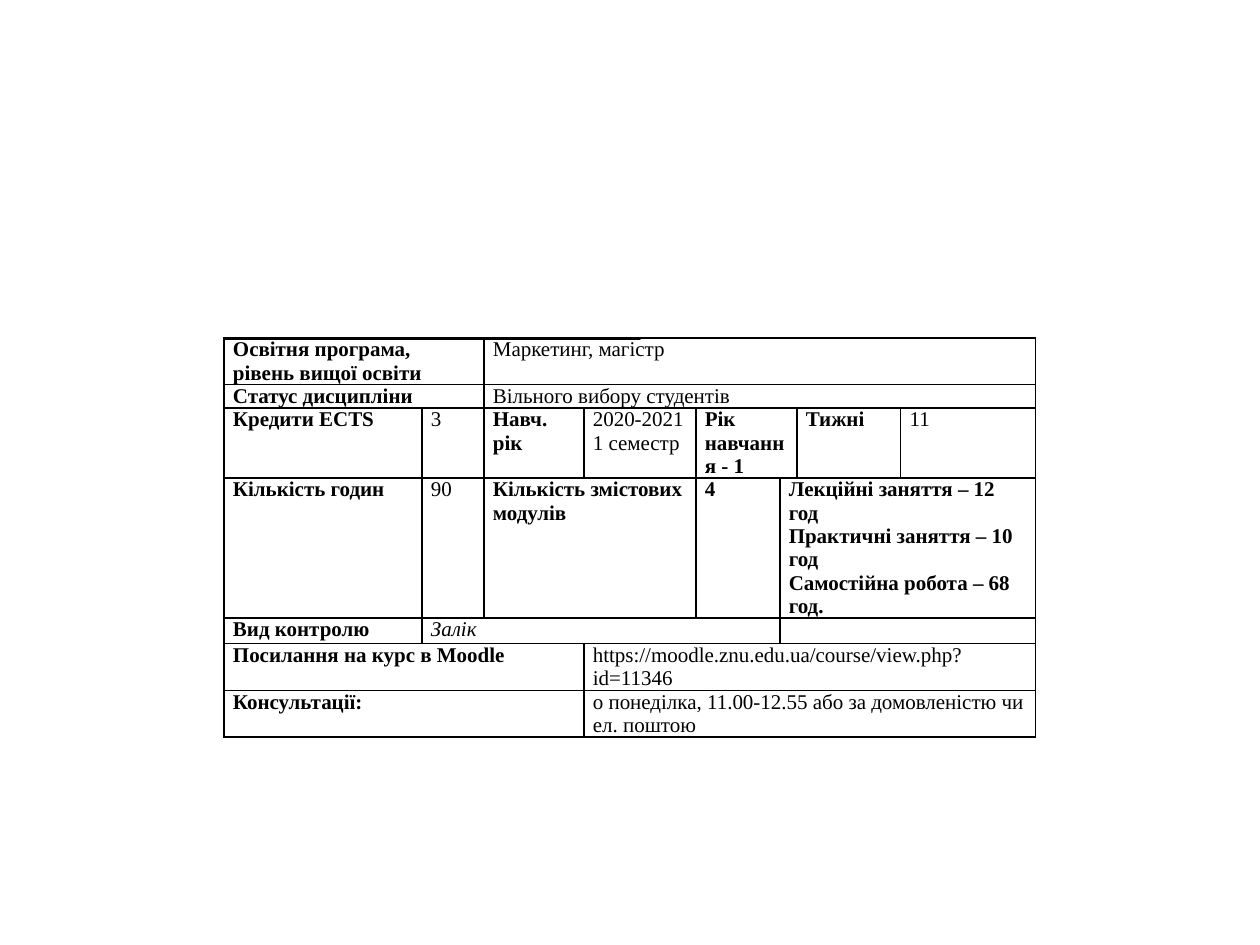
from pptx import Presentation
from pptx.dml.color import RGBColor
from pptx.enum.shapes import MSO_SHAPE
from pptx.oxml.xmlchemy import OxmlElement
from pptx.util import Emu, Pt

PX = 914400 // 126
BLACK = RGBColor(0x00, 0x00, 0x00)
FONT = "Times New Roman"
LEFT, TOP = 224, 338
COLUMN_WIDTHS = [198, 62, 100, 112, 84, 17, 104, 135]
ROW_HEIGHT = 21

# Each row lists its cells as (columns covered, text, style)
ROWS = [
    [(2, "Освітня програма, рівень вищої освіти", "bold"),
     (6, "Маркетинг, магістр", "")],
    [(2, "Статус дисципліни", "bold"),
     (6, "Вільного вибору студентів", "")],
    [(1, "Кредити ECTS", "bold"), (1, "3", ""), (1, "Навч. рік", "bold"),
     (1, "2020-2021 1 семестр", ""), (2, "Рік навчання - 1", "bold"),
     (1, "Тижні", "bold"), (1, "11", "")],
    [(1, "Кількість годин", "bold"), (1, "90", ""),
     (2, "Кількість змістових модулів", "bold"), (1, "4", "bold"),
     (3, "Лекційні заняття – 12 год\nПрактичні заняття – 10 год\n"
         "Самостійна робота – 68 год.", "bold")],
    [(1, "Вид контролю", "bold"), (4, "Залік", "italic"), (3, "", "")],
    [(3, "Посилання на курс в Moodle", "bold"),
     (5, "https://moodle.znu.edu.ua/course/view.php?id=11346", "")],
    [(3, "Консультації:", "bold"),
     (5, "о понеділка, 11.00-12.55 або за домовленістю чи ел. поштою", "")],
]


def add_borders(cell):
    properties = cell._tc.get_or_add_tcPr()
    for side in ("a:lnL", "a:lnR", "a:lnT", "a:lnB"):
        line = OxmlElement(side)
        line.set("w", str(Pt(1)))
        fill = OxmlElement("a:solidFill")
        color = OxmlElement("a:srgbClr")
        color.set("val", str(BLACK))
        fill.append(color)
        line.append(fill)
        properties.append(line)


deck = Presentation()
deck.slide_width, deck.slide_height = Emu(1260 * PX), Emu(945 * PX)
page = deck.slides.add_slide(deck.slide_layouts[6])

# Course table: grid
frame = page.shapes.add_table(
    len(ROWS), len(COLUMN_WIDTHS), Emu(LEFT * PX), Emu(TOP * PX),
    Emu(sum(COLUMN_WIDTHS) * PX), Emu(len(ROWS) * ROW_HEIGHT * PX))
table = frame.table
table.first_row = False
table.horz_banding = False
for column, width in zip(table.columns, COLUMN_WIDTHS):
    column.width = Emu(width * PX)
for row in table.rows:
    row.height = Emu(ROW_HEIGHT * PX)
frame.height = Emu(428 * PX)

for cell in table.iter_cells():
    add_borders(cell)
    cell.fill.background()
    cell.margin_left = cell.margin_right = Emu(9 * PX)
    cell.margin_top = cell.margin_bottom = 0

# Course table: text
for row_index, entries in enumerate(ROWS):
    column_index = 0
    for span_count, text, style in entries:
        cell = table.cell(row_index, column_index)
        if span_count > 1:
            cell.merge(table.cell(row_index, column_index + span_count - 1))
        column_index += span_count
        cell.text_frame.text = text
        for para in cell.text_frame.paragraphs:
            for span in para.runs:
                span.font.name = FONT
                span.font.size = Pt(12)
                span.font.bold = style == "bold"
                span.font.italic = style == "italic"
                span.font.color.rgb = BLACK
            if not text:
                # Keeps the empty cell as low as one line of text
                end = OxmlElement("a:endParaRPr")
                end.set("sz", "1200")
                para._p.append(end)

# Thin rule along the top edge
rule = page.shapes.add_shape(
    MSO_SHAPE.RECTANGLE, Emu(LEFT * PX), Emu(TOP * PX), Emu(416 * PX), Emu(PX))
rule.shadow.inherit = False
rule.fill.solid()
rule.fill.fore_color.rgb = BLACK
rule.line.color.rgb = BLACK
rule.line.width = Pt(0.75)

deck.save("out.pptx")
